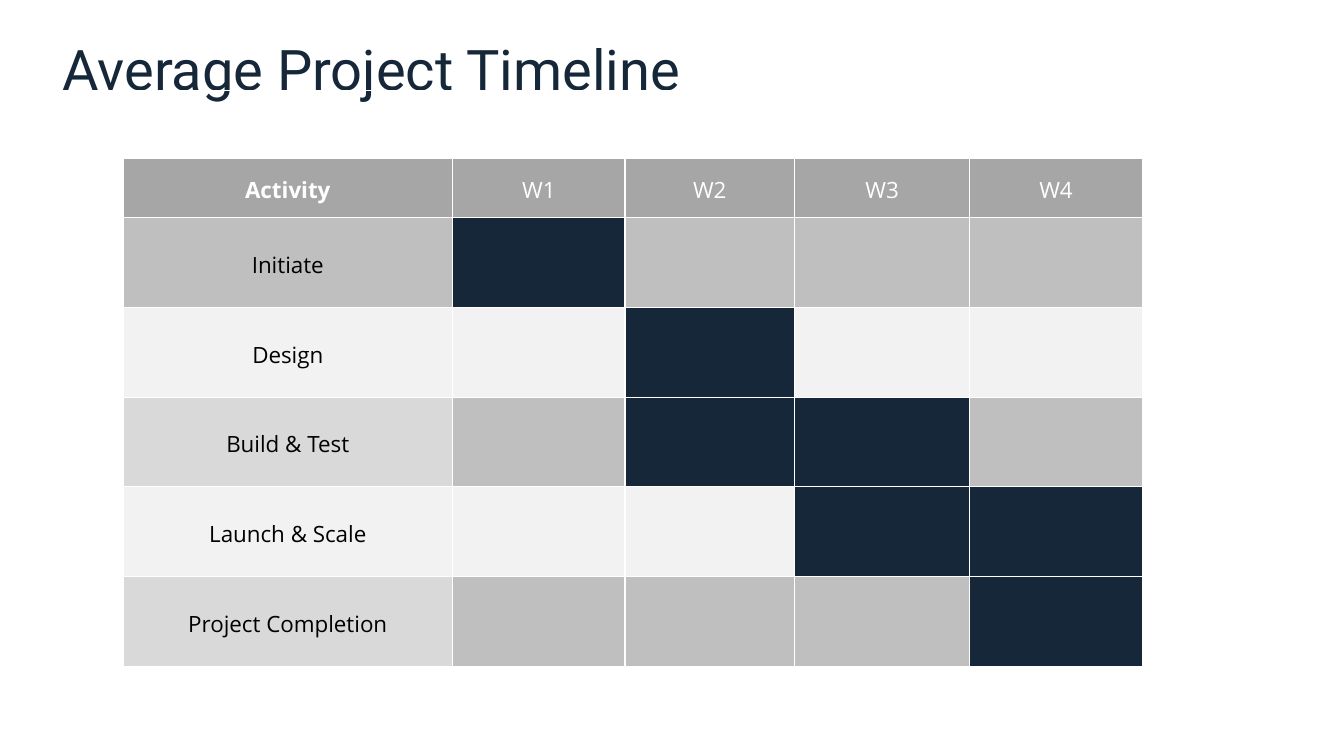
"""Build the average project timeline slide."""
from dataclasses import dataclass

from lxml import etree
from pptx import Presentation
from pptx import util as u
from pptx.dml.color import RGBColor
from pptx.enum import text
from pptx.oxml import ns


@dataclass(frozen=True)
class Theme:
    """Colours, fonts and type sizes of the slide."""
    navy: str = "162739"
    white: str = "FFFFFF"
    black: str = "000000"
    header: str = "A6A6A6"
    mid: str = "BFBFBF"
    light: str = "D9D9D9"
    pale: str = "F2F2F2"
    title_font: str = "Roboto"
    table_font: str = "Open Sans"
    title_size: int = 40
    table_size: int = 16
    border_width: int = 1


@dataclass(frozen=True)
class Activity:
    """One timeline row: its label, label fill, week fill and active weeks."""
    name: str
    label_fill: str
    week_fill: str
    active_weeks: tuple[int, ...]


THEME = Theme()
SLIDE_WIDTH, SLIDE_HEIGHT = u.Inches(13.33), u.Inches(7.5)
WEEKS = ("W1", "W2", "W3", "W4")
ACTIVITIES = (
    Activity("Initiate", THEME.mid, THEME.mid, (1,)),
    Activity("Design", THEME.pale, THEME.pale, (2,)),
    Activity("Build & Test", THEME.light, THEME.mid, (2, 3)),
    Activity("Launch & Scale", THEME.pale, THEME.pale, (3, 4)),
    Activity("Project Completion", THEME.light, THEME.mid, (4,)),
)
COLUMN_SHARES = (24.53, 12.83, 12.6, 13.05, 12.83)
ROW_SHARES = (8.93, 7.87) + (11.87,) * len(ACTIVITIES)


def across(percent: float) -> int:
    """Return a percentage of the slide width."""
    return round(SLIDE_WIDTH * percent / 100)


def down(percent: float) -> int:
    """Return a percentage of the slide height."""
    return round(SLIDE_HEIGHT * percent / 100)


def add_borders(cell) -> None:
    """Give a cell white lines on all four sides."""
    properties = cell._tc.get_or_add_tcPr()
    for side in ("lnL", "lnR", "lnT", "lnB"):
        line = etree.SubElement(properties, ns.qn(f"a:{side}"),
                                w=str(u.Pt(THEME.border_width)))
        fill = etree.SubElement(line, ns.qn("a:solidFill"))
        etree.SubElement(fill, ns.qn("a:srgbClr"), val=THEME.white)


def paint(cell, colour: str) -> None:
    """Fill a cell with one colour."""
    cell.fill.solid()
    cell.fill.fore_color.rgb = RGBColor.from_string(colour)


def write_label(cell, label: str, colour: str, bold: bool = False) -> None:
    """Write centred text into a cell."""
    cell.text = label
    cell.vertical_anchor = text.MSO_ANCHOR.MIDDLE
    cell.margin_left = cell.margin_right = u.Inches(0.01)
    cell.margin_top = cell.margin_bottom = 0
    paragraph = cell.text_frame.paragraphs[0]
    paragraph.alignment = text.PP_ALIGN.CENTER
    paragraph.line_spacing = 1.15
    paragraph.font.name = THEME.table_font
    paragraph.font.size = u.Pt(THEME.table_size)
    paragraph.font.bold = bold
    paragraph.font.color.rgb = RGBColor.from_string(colour)


def add_title(slide) -> None:
    """Place and format the slide title."""
    title = slide.shapes.title
    title.left, title.top = across(3.9), down(3.87)
    title.width, title.height = across(86.27), down(11.47)
    title.text_frame.text = "Average Project Timeline"
    title.text_frame.vertical_anchor = text.MSO_ANCHOR.MIDDLE
    heading = title.text_frame.paragraphs[0]
    heading.alignment = text.PP_ALIGN.LEFT
    heading.line_spacing = 0.9
    heading.font.name = THEME.title_font
    heading.font.size = u.Pt(THEME.title_size)
    heading.font.color.rgb = RGBColor.from_string(THEME.navy)


def add_timeline(slide) -> None:
    """Draw the activity table with its active weeks in navy."""
    timeline = slide.shapes.add_table(
        len(ROW_SHARES), len(COLUMN_SHARES), across(9.15), down(12),
        across(sum(COLUMN_SHARES)), down(sum(ROW_SHARES))).table
    timeline.first_row = timeline.horz_banding = False
    for column, share in zip(timeline.columns, COLUMN_SHARES):
        column.width = across(share)
    for row, share in zip(timeline.rows, ROW_SHARES):
        row.height = down(share)
    for cell in timeline.iter_cells():
        add_borders(cell)

    spacer = timeline.cell(0, 0)
    spacer.merge(timeline.cell(0, len(WEEKS)))
    spacer.fill.background()

    for column, heading in enumerate(("Activity", *WEEKS)):
        cell = timeline.cell(1, column)
        paint(cell, THEME.header)
        write_label(cell, heading, THEME.white, bold=column == 0)

    for row, activity in enumerate(ACTIVITIES, start=2):
        label = timeline.cell(row, 0)
        paint(label, activity.label_fill)
        write_label(label, activity.name, THEME.black)
        for week in range(1, len(WEEKS) + 1):
            active = week in activity.active_weeks
            paint(timeline.cell(row, week),
                  THEME.navy if active else activity.week_fill)


def main() -> None:
    """Create and save the presentation."""
    deck = Presentation()
    deck.slide_width, deck.slide_height = SLIDE_WIDTH, SLIDE_HEIGHT
    slide = deck.slides.add_slide(deck.slide_layouts.get_by_name("Title Only"))
    add_title(slide)
    add_timeline(slide)
    deck.save("out.pptx")


if __name__ == "__main__":
    main()
